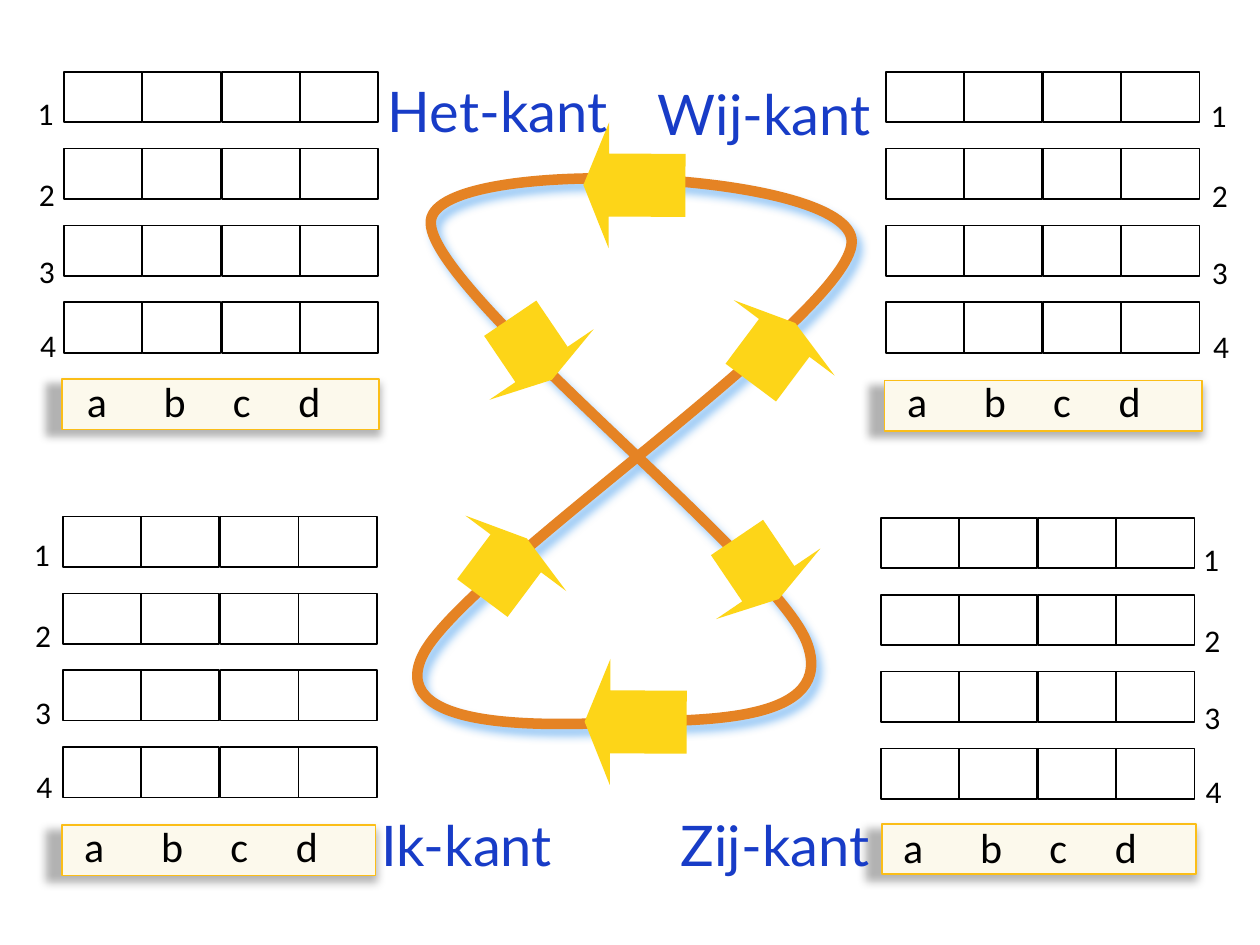
import pptx
import pptx.util
import pptx.dml.color
import pptx.enum.shapes
import pptx.enum.text
import pptx.oxml.ns
from lxml import etree

RGB = pptx.dml.color.RGBColor
KIND = pptx.enum.shapes.MSO_SHAPE
ALIGN = pptx.enum.text.PP_ALIGN
qn = pptx.oxml.ns.qn

SCALE = 9144
ORANGE = RGB(0xE5, 0x83, 0x24)
YELLOW = RGB(0xFD, 0xD5, 0x18)
CREAM = RGB(0xFC, 0xF9, 0xEC)
GOLD = RGB(0xFB, 0xBE, 0x18)
BLUE = RGB(0x18, 0x3C, 0xC7)
SKY = RGB(0x76, 0xB6, 0xF2)
BLACK = RGB(0, 0, 0)
WHITE = RGB(255, 255, 255)

LOOP = [
    (640, 509),
    (666, 575), (553, 571), (502, 573),
    (451, 575), (306, 584), (335, 521),
    (364, 457), (675, 250), (676, 192),
    (677, 135), (348, 122), (342, 175),
    (336, 227), (613, 442), (640, 509),
]
ARROWS = [
    (392, 227, 59, 235.9),
    (463, 97, 81, 0.3),
    (584, 230, 59, 126.8),
    (464, 523, 81, 0.3),
    (572, 401, 59, 235.9),
    (371, 401, 59, 126.8),
]
PANELS = [
    dict(grid=(703, 57), bar=(702, 302, 252), text=(710, 293), digit=(951, 71),
         name="Wij-kant", label=(511, 58, 190), align=ALIGN.RIGHT),
    dict(grid=(50, 410), bar=(49, 655, 249), text=(57, 646), digit=(17, 420),
         name="Ik-kant", label=(277, 638, 171), align=ALIGN.RIGHT),
    dict(grid=(51, 57), bar=(49, 301, 252), text=(59, 293), digit=(20, 70),
         name="Het-kant", label=(298, 56, 215), align=ALIGN.LEFT),
    dict(grid=(699, 411), bar=(700, 654, 249), text=(707, 647), digit=(945, 424),
         name="Zij-kant", label=(520, 638, 180), align=ALIGN.RIGHT),
]
DIGITS = [(0, 0), (1, 64), (1, 125), (2, 184)]
WHITES = {(0, 0), (0, 1), (0, 3), (1, 3)}
TABS = [61, 116, 168]


def px(n):
    """Turn px into EMU."""
    return pptx.util.Emu(n * SCALE)


def paint(shape, fill=None, line=None, width=1):
    """Set the fill and line of a shape and drop its shadow."""
    shape.shadow.inherit = False
    if fill is None:
        shape.fill.background()
    else:
        shape.fill.solid()
        shape.fill.fore_color.rgb = fill
    if line is None:
        shape.line.fill.background()
    else:
        shape.line.color.rgb = line
        shape.line.width = pptx.util.Pt(width)


def shade(shape, color, alpha, dist, angle, **more):
    """Give a painted shape a soft outer shadow."""
    effects = shape._element.spPr.find(qn("a:effectLst"))
    outer = etree.SubElement(
        effects, qn("a:outerShdw"), blurRad=str(5 * 12700),
        dist=str(dist * 12700), dir=str(angle * 60000), rotWithShape="0", **more)
    tint = etree.SubElement(outer, qn("a:srgbClr"), val=str(color))
    etree.SubElement(tint, qn("a:alpha"), val=str(alpha * 1000))


def box(slide, kind, x, y, w, h, **look):
    """Add a painted preset shape."""
    shape = slide.shapes.add_shape(kind, px(x), px(y), px(w), px(h))
    paint(shape, **look)
    return shape


def write(slide, text, x, y, w, h, size, font="Calibri", color=BLACK,
          align=ALIGN.LEFT, tabs=()):
    """Add a one-line text box."""
    frame = slide.shapes.add_textbox(px(x), px(y), px(w), px(h)).text_frame
    frame.word_wrap = True
    para = frame.paragraphs[0]
    para.text = text
    para.alignment = align
    if tabs:
        stops = etree.SubElement(para._p.get_or_add_pPr(), qn("a:tabLst"))
        for stop in tabs:
            etree.SubElement(stops, qn("a:tab"), pos=str(px(stop)), algn="l")
    for run in para.runs:
        run.font.size = pptx.util.Pt(size)
        run.font.name = font
        run.font.color.rgb = color


def loop(slide):
    """Draw the closed figure of eight from Bezier points."""
    pen = slide.shapes.build_freeform(*LOOP[0], scale=SCALE)
    pen.add_line_segments(LOOP[1:], close=True)
    shape = pen.convert_to_shape()
    lines = list(shape._element.iter(qn("a:lnTo")))
    for first in range(0, len(LOOP) - 1, 3):
        curve = etree.Element(qn("a:cubicBezTo"))
        lines[first].addprevious(curve)
        for line in lines[first:first + 3]:
            curve.append(line[0])
    for line in lines:
        line.getparent().remove(line)
    paint(shape, line=ORANGE, width=6)
    shade(shape, SKY, 75, 5, 53)


def arrow(slide, x, y, w, turn):
    """Add a yellow arrow on the loop."""
    shape = box(slide, KIND.LEFT_ARROW, x, y, w, 100, fill=YELLOW)
    shape.adjustments[0] = 0.5
    shape.adjustments[1] = 0.25
    shape.rotation = turn


def panel(slide, grid, bar, text, digit, name, label, align):
    """Add one side: letter bar, name, cell grid and row numbers."""
    x, y, w = bar
    strip = box(slide, KIND.RECTANGLE, x, y, w, 40, fill=CREAM, line=GOLD)
    shade(strip, BLACK, 30, 3, 90, sx="105000", algn="br")
    write(slide, name, *label, 64, 32, "Lato", BLUE, align)
    for row in reversed(range(4)):
        for col in range(4):
            fill = WHITE if (row, col) in WHITES else None
            box(slide, KIND.RECTANGLE, grid[0] + col * 125 // 2,
                grid[1] + row * 61, 62, 40, fill=fill, line=BLACK)
    write(slide, "a\tb\tc\td", *text, 241, 50, 24, tabs=TABS)
    for count, (dx, dy) in enumerate(DIGITS, 1):
        write(slide, str(count), digit[0] + dx, digit[1] + dy, 34, 40, 18)


def main():
    """Build and save the slide."""
    deck = pptx.Presentation()
    deck.slide_width, deck.slide_height = px(1000), px(750)
    slide = deck.slides.add_slide(deck.slide_layouts[6])
    loop(slide)
    for item in ARROWS:
        arrow(slide, *item)
    for item in PANELS:
        panel(slide, **item)
    deck.save("out.pptx")


if __name__ == "__main__":
    main()
